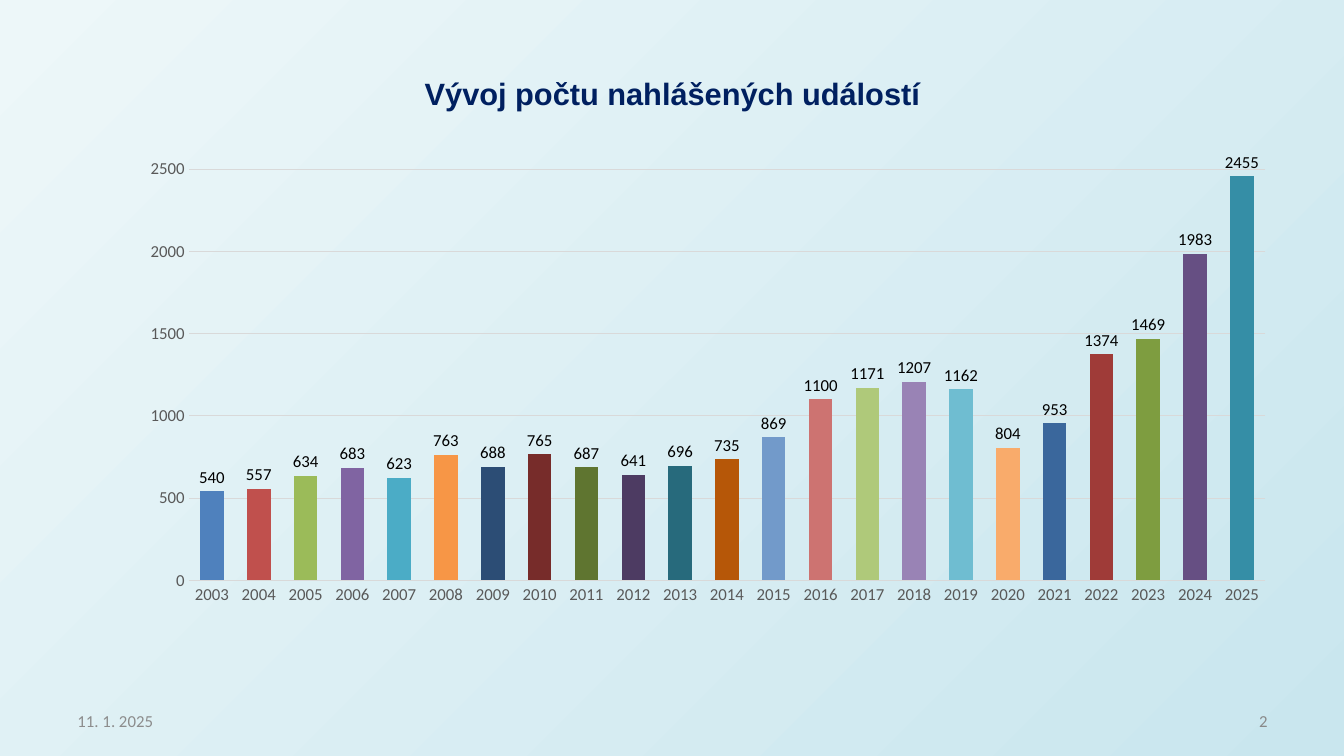
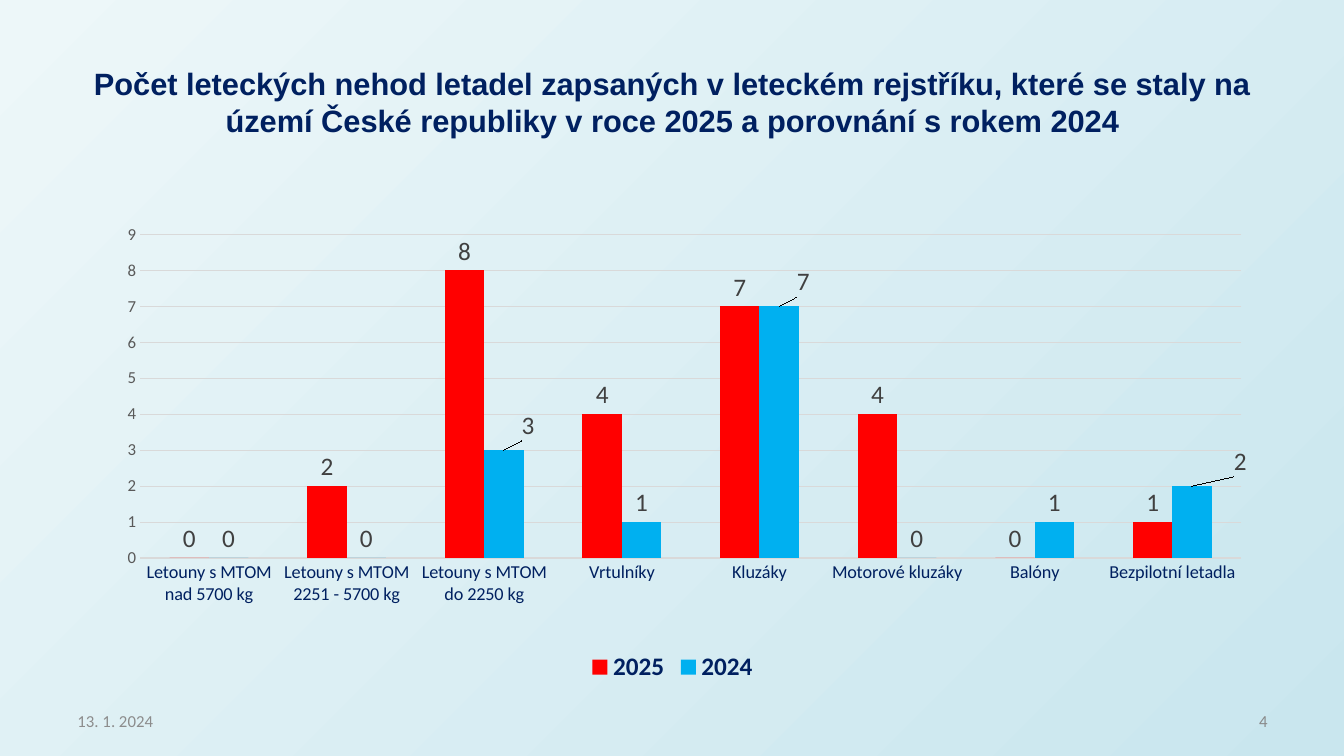
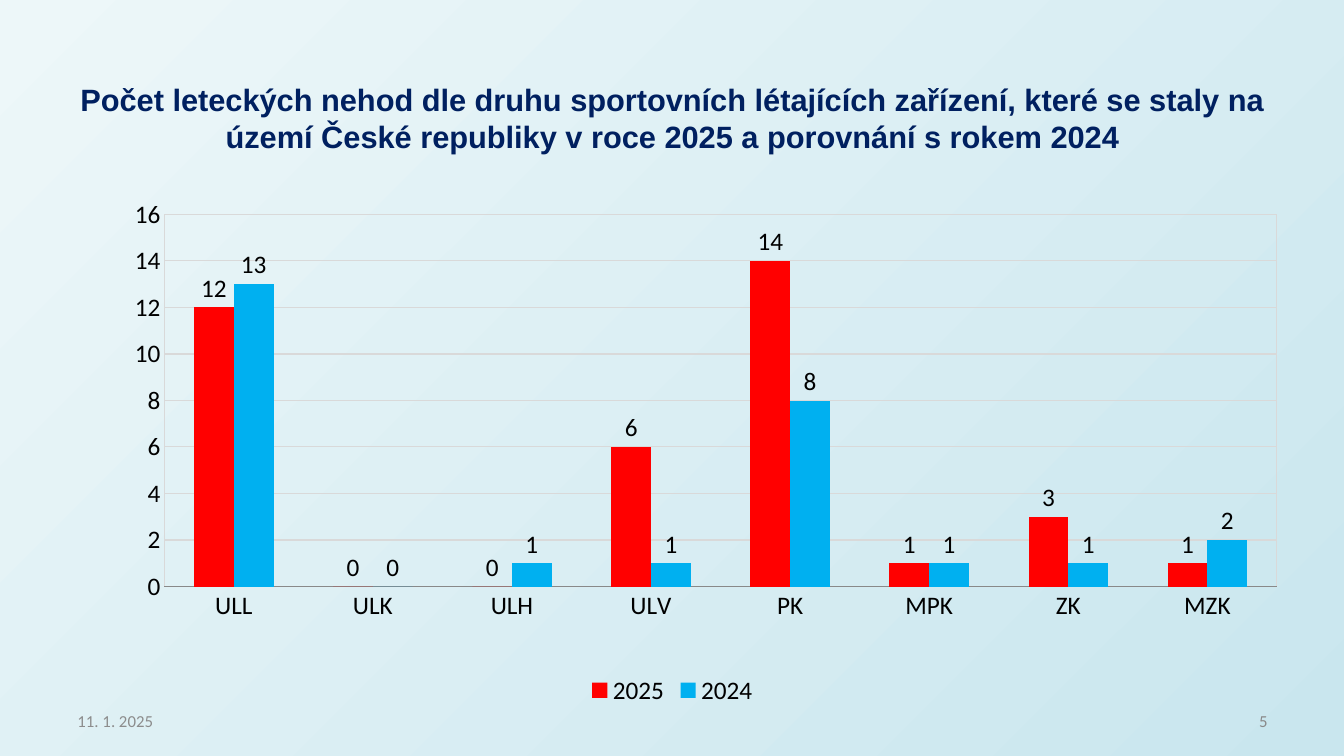
import pptx
import pptx.util
import pptx.oxml
import pptx.chart.data
import pptx.dml.color
import pptx.enum.chart
import pptx.enum.text

Inches = pptx.util.Inches
Pt = pptx.util.Pt
CHART_NS = "http://schemas.openxmlformats.org/drawingml/2006/chart"
DRAWING_NS = "http://schemas.openxmlformats.org/drawingml/2006/main"
NAVY, BLACK, GREY, GRID = "002060", "000000", "595959", "D9D9D9"
RED, BLUE = "FF0000", "00B0F0"


def rgb(value):
    return pptx.dml.color.RGBColor.from_string(value)


def manual_layout(**settings):
    tags = "".join(f'<c:{tag} val="{value}"/>' for tag, value in settings.items())
    return pptx.oxml.parse_xml(
        f'<c:layout xmlns:c="{CHART_NS}"><c:manualLayout>{tags}</c:manualLayout></c:layout>'
    )


year_colors = (
    "4F81BD C0504D 9BBB59 8064A2 4BACC6 F79646 2C4D75 772C2A 5F7530 4D3B62 276A7C B65708 "
    "729ACA CD7371 AFC97A 9983B5 6FBDD1 F9AB6B 3A679C 9F3B38 7E9D40 664F83 358EA6"
).split()

reports = [
    {
        "title": "Vývoj počtu nahlášených událostí",
        "title_top": 0.3, "title_bottom_inset": 0.05,
        "date": "11. 1. 2025", "number": "2",
        "chart_top": 1.23, "chart_height": 5.59,
        "plot": (0.1, 0.08, 0.89, 0.73), "gap": 99,
        "categories": [str(year) for year in range(2003, 2026)],
        "series": [("Series 1", year_colors[0], [
            540, 557, 634, 683, 623, 763, 688, 765, 687, 641, 696, 735,
            869, 1100, 1171, 1207, 1162, 804, 953, 1374, 1469, 1983, 2455])],
        "point_colors": year_colors,
        "category_font": (12, GREY), "value_font": (12, GREY), "label_font": (12, BLACK),
        "maximum": 2500, "unit": 500, "axis_line": GRID, "grid_width": 0.75,
    },
    {
        "title": "Počet leteckých nehod letadel zapsaných v leteckém rejstříku, které se staly na "
                 "území České republiky v roce 2025 a porovnání s rokem 2024",
        "title_top": 0.38, "title_bottom_inset": 0.05,
        "date": "13. 1. 2024", "number": "4",
        "chart_top": 1.47, "chart_height": 5.35,
        "plot": (0.06, 0.16, 0.91, 0.6), "gap": 150,
        "categories": [
            "Letouny s MTOM nad 5700 kg", "Letouny s MTOM 2251 - 5700 kg",
            "Letouny s MTOM do 2250 kg", "Vrtulníky", "Kluzáky", "Motorové kluzáky",
            "Balóny", "Bezpilotní letadla"],
        "series": [("2025", RED, [0, 2, 8, 4, 7, 4, 0, 1]),
                   ("2024", BLUE, [0, 0, 3, 1, 7, 0, 1, 2])],
        "moved_labels": {2: (0.02, -0.01), 4: (0.02, -0.01), 7: (0.04, -0.01)},
        "category_font": (13, NAVY), "value_font": (12, GREY), "label_font": (18, "404040"),
        "legend_font": (18, NAVY), "legend_bold": True, "legend_overlay": True,
        "maximum": 9, "unit": 1, "axis_line": GRID, "grid_width": 0.5,
    },
    {
        "title": "Počet leteckých nehod dle druhu sportovních létajících zařízení, které se staly na "
                 "území České republiky v roce 2025 a porovnání s rokem 2024",
        "title_top": 0.71, "title_bottom_inset": 0.39,
        "date": "11. 1. 2025", "number": "5",
        "chart_top": 1.7, "chart_height": 5.35,
        "plot": (0.08, 0.08, 0.92, 0.69), "gap": 150, "plot_border": GRID,
        "categories": ["ULL", "ULK", "ULH", "ULV", "PK", "MPK", "ZK", "MZK"],
        "series": [("2025", RED, [12, 0, 0, 6, 14, 1, 3, 1]),
                   ("2024", BLUE, [13, 0, 1, 1, 8, 1, 1, 2])],
        "category_font": (18, BLACK), "value_font": (18, BLACK), "label_font": (18, BLACK),
        "legend_font": (18, BLACK),
        "maximum": 16, "unit": 2, "axis_line": "898989", "grid_width": 0,
    },
]

deck = pptx.Presentation()
deck.slide_width, deck.slide_height = Inches(13.33), Inches(7.5)
backdrop = deck.slide_master.background.fill
backdrop.gradient()
backdrop.gradient_angle = 315
for stop, shade, position in zip(backdrop.gradient_stops, ("EDF7F9", "C9E6EE"), (0, 1)):
    stop.color.rgb = rgb(shade)
    stop.position = position

for report in reports:
    slide = deck.slides.add_slide(deck.slide_layouts[5])

    heading = slide.shapes.title
    heading.left, heading.top = Inches(0.67), Inches(report["title_top"])
    heading.width, heading.height = Inches(12), Inches(1.25)
    heading.text_frame.text = report["title"]
    heading.text_frame.auto_size = pptx.enum.text.MSO_AUTO_SIZE.NONE
    heading.text_frame.vertical_anchor = pptx.enum.text.MSO_ANCHOR.MIDDLE
    heading.text_frame.margin_bottom = Inches(report["title_bottom_inset"])
    headline = heading.text_frame.paragraphs[0]
    headline.alignment = pptx.enum.text.PP_ALIGN.CENTER
    headline.font.name, headline.font.size, headline.font.bold = "Arial", Pt(22), True
    headline.font.color.rgb = rgb(NAVY)

    for wording, left, alignment, shade in (
        (report["date"], 0.67, pptx.enum.text.PP_ALIGN.LEFT, "8C8C8C"),
        (report["number"], 9.56, pptx.enum.text.PP_ALIGN.RIGHT, "898989"),
    ):
        footer = slide.shapes.add_textbox(Inches(left), Inches(6.95), Inches(3.11), Inches(0.4))
        footer.text_frame.word_wrap = True
        footer.text_frame.vertical_anchor = pptx.enum.text.MSO_ANCHOR.MIDDLE
        footer_line = footer.text_frame.paragraphs[0]
        footer_line.text = wording
        footer_line.alignment = alignment
        footer_line.font.name, footer_line.font.size = "Calibri", Pt(12)
        footer_line.font.color.rgb = rgb(shade)

    counts = pptx.chart.data.CategoryChartData()
    counts.categories = report["categories"]
    for name, _, values in report["series"]:
        counts.add_series(name, values)
    chart = slide.shapes.add_chart(
        pptx.enum.chart.XL_CHART_TYPE.COLUMN_CLUSTERED,
        Inches(0.67), Inches(report["chart_top"]), Inches(12), Inches(report["chart_height"]), counts,
    ).chart
    chart.has_title = False
    chart.font.name, chart.font.size = "Calibri", Pt(18)
    chart.font.color.rgb = rgb(BLACK)

    columns = chart.plots[0]
    columns.gap_width = report["gap"]
    columns.vary_by_categories = False

    styled_fonts = [
        (chart.category_axis.tick_labels.font, report["category_font"]),
        (chart.value_axis.tick_labels.font, report["value_font"]),
    ]
    for year, (_, shade, _) in zip(columns.series, report["series"]):
        year.format.fill.solid()
        year.format.fill.fore_color.rgb = rgb(shade)
        year.invert_if_negative = False
        year.data_labels.show_value = True
        year.data_labels.position = pptx.enum.chart.XL_LABEL_POSITION.OUTSIDE_END
        styled_fonts.append((year.data_labels.font, report["label_font"]))
    for index, shade in enumerate(report.get("point_colors", [])):
        column_fill = columns.series[0].points[index].format.fill
        column_fill.solid()
        column_fill.fore_color.rgb = rgb(shade)
    for index, (x, y) in report.get("moved_labels", {}).items():
        previous_year = columns.series[1]
        moved = previous_year.points[index].data_label
        moved.position = pptx.enum.chart.XL_LABEL_POSITION.OUTSIDE_END
        styled_fonts.append((moved.font, report["label_font"]))
        label_xml = previous_year.data_labels._element.xpath(f"c:dLbl[c:idx/@val={index}]")[0]
        label_xml.insert(1, manual_layout(x=x, y=y))

    chart.has_legend = "legend_font" in report
    if chart.has_legend:
        chart.legend.position = pptx.enum.chart.XL_LEGEND_POSITION.BOTTOM
        chart.legend.include_in_layout = report.get("legend_overlay", False)
        chart.legend.font.bold = report.get("legend_bold", False)
        styled_fonts.append((chart.legend.font, report["legend_font"]))

    for font, (size, shade) in styled_fonts:
        font.name, font.size = "Calibri", Pt(size)
        font.color.rgb = rgb(shade)

    for axis in (chart.category_axis, chart.value_axis):
        axis.major_tick_mark = pptx.enum.chart.XL_TICK_MARK.NONE
        axis.minor_tick_mark = pptx.enum.chart.XL_TICK_MARK.NONE
    chart.category_axis.format.line.color.rgb = rgb(report["axis_line"])
    chart.category_axis.format.line.width = Pt(0.75)
    chart.value_axis.format.line.fill.background()
    chart.value_axis.minimum_scale = 0
    chart.value_axis.maximum_scale = report["maximum"]
    chart.value_axis.major_unit = report["unit"]
    gridlines = chart.value_axis.major_gridlines.format.line
    gridlines.color.rgb = rgb(GRID)
    gridlines.width = Pt(report["grid_width"])

    plot_area = chart.element.xpath("c:chart/c:plotArea")[0]
    for automatic in plot_area.xpath("c:layout"):
        plot_area.remove(automatic)
    x, y, w, h = report["plot"]
    plot_area.insert(0, manual_layout(
        layoutTarget="inner", xMode="edge", yMode="edge", x=x, y=y, w=w, h=h))
    if "plot_border" in report:
        plot_area.append(pptx.oxml.parse_xml(
            f'<c:spPr xmlns:c="{CHART_NS}" xmlns:a="{DRAWING_NS}"><a:noFill/><a:ln><a:solidFill>'
            f'<a:srgbClr val="{report["plot_border"]}"/></a:solidFill></a:ln></c:spPr>'))

deck.save("out.pptx")
